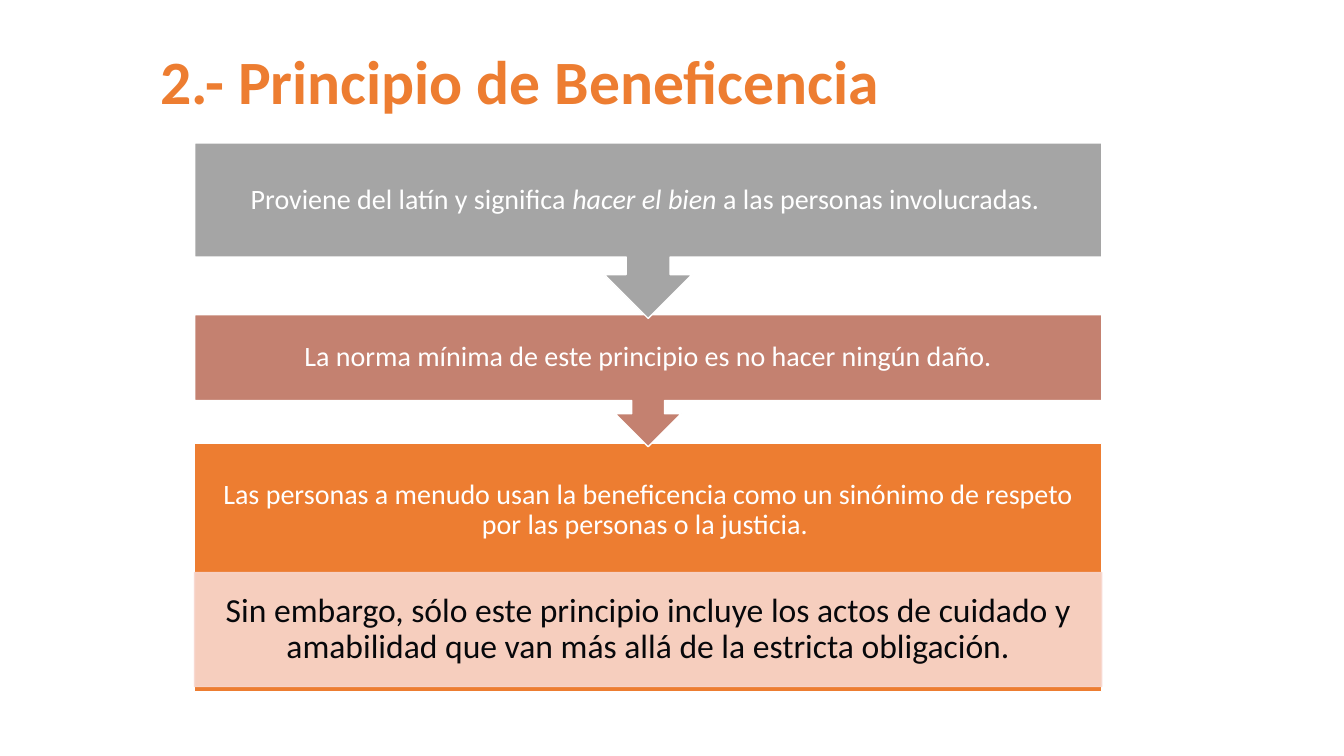
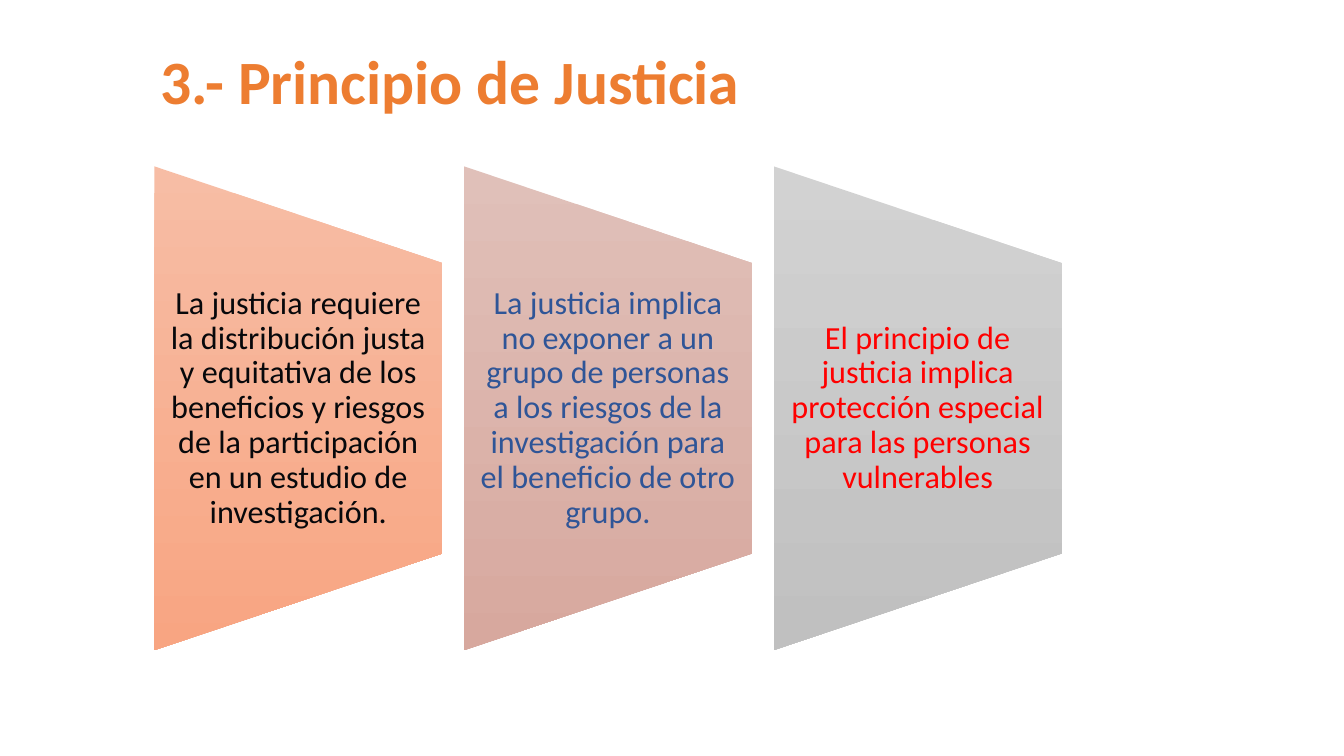
from pptx import Presentation
from pptx.dml.color import RGBColor
from pptx.enum.shapes import MSO_SHAPE
from pptx.enum.text import MSO_ANCHOR, MSO_AUTO_SIZE, PP_ALIGN
from pptx.oxml.ns import qn
from pptx.util import Pt
from lxml.etree import SubElement

ORANGE = RGBColor(0xED, 0x7D, 0x31)
TERRACOTTA = RGBColor(0xC4, 0x81, 0x70)
GREY = RGBColor(0xA5, 0xA5, 0xA5)
PEACH = RGBColor(0xF8, 0xD7, 0xCE)
WHITE = RGBColor(0xFF, 0xFF, 0xFF)
INK = RGBColor(0x07, 0x08, 0x0B)
BLUE = RGBColor(0x2F, 0x55, 0x97)
RED = RGBColor(0xFF, 0x00, 0x00)
SALMON_FADE = (RGBColor(0xF7, 0xBD, 0xA5), RGBColor(0xF8, 0xA5, 0x82))
ROSE_FADE = (RGBColor(0xE0, 0xC0, 0xB9), RGBColor(0xD7, 0xA8, 0x9E))
SILVER_FADE = (RGBColor(0xD2, 0xD2, 0xD2), RGBColor(0xC0, 0xC0, 0xC0))

STEP_LEFT, STEP_WIDTH = 139, 648
STEP_INSETS = (11.5, 11.5, 11.5, 11.5)
NOTE_HEIGHT = 81.4
PANEL_LEFT, PANEL_PITCH, PANEL_MIDDLE = 110.2, 221.2, 291.6
PANEL_WIDTH, PANEL_HEIGHT, PANEL_TEXT_HEIGHT = 205.9, 345.6, 207.4


class Deck:
    """Holds the presentation, its shared style and the current slide."""

    font = "Calibri"

    def __init__(self):
        self.presentation = Presentation()
        self.presentation.slide_width = Pt(960)
        self.presentation.slide_height = Pt(540)
        self.slide = None

    def set_text(self, frame, runs, size, color, insets, align=PP_ALIGN.CENTER, bold=False):
        frame.word_wrap = True
        frame.auto_size = MSO_AUTO_SIZE.NONE
        frame.vertical_anchor = MSO_ANCHOR.MIDDLE
        (frame.margin_left, frame.margin_top,
         frame.margin_right, frame.margin_bottom) = map(Pt, insets)
        paragraph = frame.paragraphs[0]
        paragraph.alignment = align
        paragraph.line_spacing = 0.9
        for words, italic in runs:
            run = paragraph.add_run()
            run.text = words
            run.font.name = self.font
            run.font.size = Pt(size)
            run.font.bold = bold
            run.font.italic = italic
            run.font.color.rgb = color

    def start_slide(self, heading):
        self.slide = self.presentation.slides.add_slide(self.presentation.slide_layouts[5])
        title = self.slide.shapes.title
        title.left, title.top, title.width, title.height = map(Pt, (107.3, 31, 781, 58.3))
        self.set_text(title.text_frame, [(heading, False)], 44, ORANGE,
                      (7.2, 3.6, 7.2, 3.6), PP_ALIGN.LEFT, True)

    def step(self, preset, top, height, fill, runs, insets=STEP_INSETS,
             size=20, ink=WHITE, edge=WHITE, opacity=100):
        box = self.slide.shapes.add_shape(
            preset, Pt(STEP_LEFT), Pt(top), Pt(STEP_WIDTH), Pt(height))
        box.shadow.inherit = False
        box.fill.solid()
        box.fill.fore_color.rgb = fill
        box.line.color.rgb = edge
        box.line.width = Pt(1)
        if opacity < 100:
            for tint in box._element.spPr.iter(qn("a:srgbClr")):
                SubElement(tint, qn("a:alpha")).set("val", str(opacity * 1000))
        self.set_text(box.text_frame, runs, size, ink, insets)

    def panel(self, column, fade, words, ink):
        left = PANEL_LEFT + column * PANEL_PITCH
        panel = self.slide.shapes.add_shape(
            MSO_SHAPE.FLOWCHART_MANUAL_OPERATION,
            Pt(left + (PANEL_WIDTH - PANEL_HEIGHT) / 2), Pt(PANEL_MIDDLE - PANEL_WIDTH / 2),
            Pt(PANEL_HEIGHT), Pt(PANEL_WIDTH))
        panel.rotation = 270
        panel.shadow.inherit = False
        panel.line.fill.background()
        panel.fill.gradient()
        panel.fill.gradient_angle = 270
        for stop, shade in zip(panel.fill.gradient_stops, fade):
            stop.color.rgb = shade
        panel._element.spPr.find(qn("a:gradFill")).set("rotWithShape", "0")
        caption = self.slide.shapes.add_textbox(
            Pt(left), Pt(PANEL_MIDDLE - PANEL_TEXT_HEIGHT / 2),
            Pt(PANEL_WIDTH), Pt(PANEL_TEXT_HEIGHT))
        self.set_text(caption.text_frame, [(words, False)], 23, ink, (11.5, 0, 11.5, 0))


def main():
    deck = Deck()

    deck.start_slide("2.- Principio de Beneficencia")
    deck.step(MSO_SHAPE.RECTANGLE, 316.8, 177.1, ORANGE,
              [("Las personas a menudo usan la beneficencia como un sinónimo de respeto "
                "por las personas o la justicia. ", False)],
              (11.5, 11.5, 11.5, 11.5 + NOTE_HEIGHT))
    deck.step(MSO_SHAPE.RECTANGLE, 409, NOTE_HEIGHT, PEACH,
              [("Sin embargo, sólo este principio incluye los actos de cuidado y "
                "amabilidad que van más allá de la estricta obligación.", False)],
              (13.7, 2.2, 13.7, 2.2), size=24, ink=INK, edge=PEACH, opacity=90)
    deck.step(MSO_SHAPE.DOWN_ARROW_CALLOUT, 224.8, 94.3, TERRACOTTA,
              [("La norma mínima de este principio es no hacer ningún daño.", False)])
    deck.step(MSO_SHAPE.DOWN_ARROW_CALLOUT, 102.2, 125.3, GREY,
              [("Proviene del latín y significa ", False), ("hacer el bien ", True),
               ("a las personas involucradas. ", False)])

    deck.start_slide("3.- Principio de Justicia")
    panels = (
        (SALMON_FADE, "La justicia requiere la distribución justa y equitativa de los beneficios "
                      "y riesgos de la participación en un estudio de investigación.", INK),
        (ROSE_FADE, "La justicia implica no exponer a un grupo de personas a los riesgos "
                    "de la investigación para el beneficio de otro grupo.", BLUE),
        (SILVER_FADE, "El principio de justicia implica protección especial "
                      "para las personas vulnerables", RED),
    )
    for column, (fade, words, ink) in enumerate(panels):
        deck.panel(column, fade, words, ink)

    deck.presentation.save("out.pptx")


if __name__ == "__main__":
    main()
